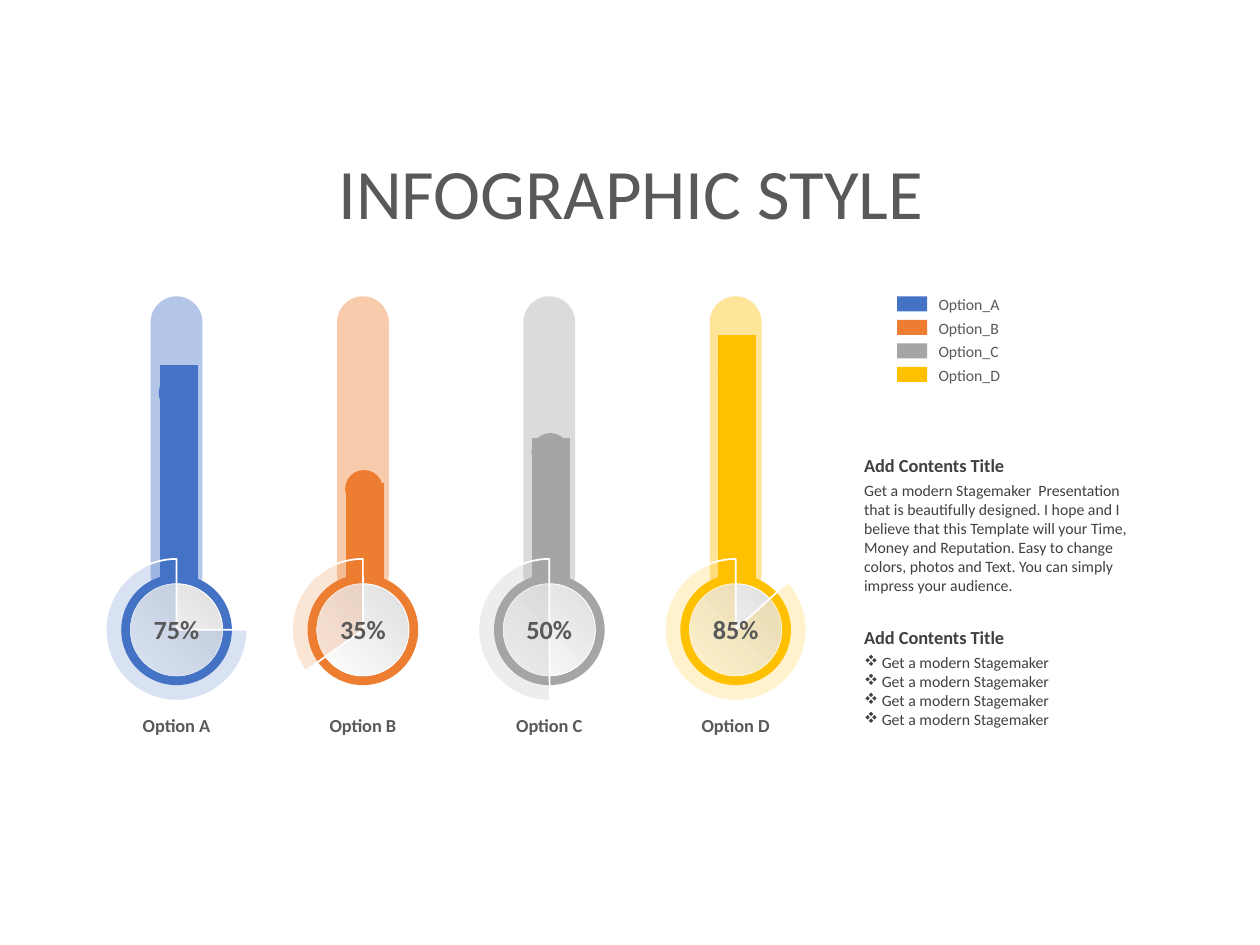
import pptx
import pptx.chart.data
import pptx.dml.color
import pptx.enum.chart
import pptx.enum.shapes
import pptx.enum.text
import pptx.oxml
import pptx.util
from collections import namedtuple

Pt = pptx.util.Pt
RGBColor = pptx.dml.color.RGBColor
Shape = pptx.enum.shapes.MSO_SHAPE
Align = pptx.enum.text.PP_ALIGN
Anchor = pptx.enum.text.MSO_ANCHOR

BLUE = RGBColor(0x44, 0x72, 0xC4)
ORANGE = RGBColor(0xED, 0x7D, 0x31)
GRAY = RGBColor(0xA5, 0xA5, 0xA5)
YELLOW = RGBColor(0xFF, 0xC0, 0x00)
WHITE = RGBColor(0xFF, 0xFF, 0xFF)
SILVER = RGBColor(0xDE, 0xDE, 0xDE)
LABEL = RGBColor(0x59, 0x59, 0x59)
BODY = RGBColor(0x40, 0x40, 0x40)
BLACK = RGBColor(0, 0, 0)

Option = namedtuple("Option", "letter color percent level pie_start cap_top")
OPTIONS = [
    Option("A", BLUE, "75%", 88, 0, 213.8),
    Option("B", ORANGE, "35%", 41, 144.35, 268.6),
    Option("C", GRAY, "50%", 59, 89.6, 247.5),
    Option("D", YELLOW, "85%", 100, 317.65, 200.2),
]
DRAWING = "http://schemas.openxmlformats.org/drawingml/2006/main"
CHART = "http://schemas.openxmlformats.org/drawingml/2006/chart"

TITLE_STYLE = {"size": Pt(40.5), "color": LABEL}
PERCENT_STYLE = {"size": Pt(15), "color": LABEL, "bold": True}
NAME_STYLE = {"size": Pt(10.5), "color": LABEL, "bold": True}
KEY_STYLE = {"size": Pt(9), "color": LABEL}
HEADING_STYLE = {"size": Pt(10.5), "color": BODY, "bold": True}
BODY_STYLE = {"size": Pt(9), "color": BODY}


def set_font(font, style):
    font.name = "Calibri"
    for name, value in style.items():
        if name == "color":
            font.color.rgb = value
        else:
            setattr(font, name, value)


def add_bullet(para):
    properties = para._p.get_or_add_pPr()
    properties.set("marL", str(Pt(10.1)))
    properties.set("indent", str(-Pt(10.1)))
    for element in ('buFont xmlns:a="{}" typeface="Wingdings" charset="2"',
                    'buChar xmlns:a="{}" char="v"'):
        properties.append(pptx.oxml.parse_xml(f"<a:{element.format(DRAWING)}/>"))


def add_text(page, box, lines, style, align=Align.LEFT, bulleted=False, frame_format=None):
    frame = page.shapes.add_textbox(*map(Pt, box)).text_frame
    frame.word_wrap = True
    for name, value in (frame_format or {}).items():
        setattr(frame, name, value)
    for index, line in enumerate(lines):
        para = frame.add_paragraph() if index else frame.paragraphs[0]
        para.alignment = align
        if bulleted:
            add_bullet(para)
        span = para.add_run()
        span.text = line
        set_font(span.font, style)


def add_figure(page, kind, box, color=None, opacity=100, outline=None):
    figure = page.shapes.add_shape(kind, *map(Pt, box))
    figure.shadow.inherit = False
    if color is not None:
        figure.fill.solid()
        figure.fill.fore_color.rgb = color
        if opacity < 100:
            swatch = figure.fill._xPr.find(f".//{{{DRAWING}}}srgbClr")
            swatch.append(pptx.oxml.parse_xml(
                f'<a:alpha xmlns:a="{DRAWING}" val="{opacity * 1000}"/>'))
    if outline:
        figure.line.color.rgb = WHITE
        figure.line.width = Pt(outline)
    else:
        figure.line.fill.background()
    return figure


def centered(x, y, size):
    return x - size / 2, y - size / 2, size, size


def add_tube(page, x, top, option):
    tube = add_figure(page, Shape.ROUNDED_RECTANGLE, (x - 14.8, top, 29.6, 174.2), option.color, 40)
    tube.adjustments[0] = 0.5


def add_bulb(page, x, y, option):
    add_figure(page, Shape.OVAL, centered(x, y, 63.2), option.color)
    disc = add_figure(page, Shape.OVAL, centered(x, y, 52.6), outline=0.5)
    disc.fill.gradient()
    disc.fill.gradient_angle = 225
    for stop, color, position in zip(disc.fill.gradient_stops, (SILVER, WHITE), (0, 1)):
        stop.color.rgb = color
        stop.position = position
    pie = add_figure(page, Shape.PIE, centered(x, y, 81), option.color, 20, 1)
    pie.adjustments[0] = option.pie_start * 0.6
    pie.adjustments[1] = 270 * 0.6
    add_text(page, (x - 31.6, y - 13, 63.2, 25.2), [option.percent], PERCENT_STYLE, Align.CENTER)
    add_text(page, (x - 36.4, y + 44.4, 72.8, 20), [f"Option {option.letter}"], NAME_STYLE, Align.CENTER)


def add_levels(page, box):
    numbers = pptx.chart.data.CategoryChartData()
    numbers.categories = ["1", "2", "3", "4"]
    numbers.add_series("Series 1", [option.level for option in OPTIONS])
    kind = pptx.enum.chart.XL_CHART_TYPE.COLUMN_STACKED
    chart = page.shapes.add_chart(kind, *map(Pt, box), numbers).chart
    set_font(chart.font, {"size": Pt(18), "color": BLACK})
    chart.has_legend = False
    chart.has_title = False
    for axis in (chart.category_axis, chart.value_axis):
        axis.has_major_gridlines = False
        axis.visible = False
    chart.value_axis.minimum_scale = 0
    chart.value_axis.maximum_scale = 100
    plot = chart.plots[0]
    for name, value in {"gap_width": 392, "overlap": 100, "vary_by_categories": False}.items():
        setattr(plot, name, value)
    series = plot.series[0]
    series.format.fill.solid()
    series.format.fill.fore_color.rgb = BLUE
    for index, option in enumerate(OPTIONS):
        fill = series.points[index].format.fill
        fill.solid()
        fill.fore_color.rgb = option.color
    area = chart._chartSpace.chart.plotArea
    for layout in area.findall(f"{{{CHART}}}layout"):
        area.remove(layout)
    sizes = "".join(f'<c:{name} val="{value}"/>' for name, value in
                    {"x": 0.02, "y": 0.07, "w": 0.96, "h": 0.9}.items())
    area.insert(0, pptx.oxml.parse_xml(
        f'<c:layout xmlns:c="{CHART}"><c:manualLayout><c:layoutTarget val="inner"/>'
        f'<c:xMode val="edge"/><c:yMode val="edge"/>{sizes}</c:manualLayout></c:layout>'))


def add_thermometers(page, left, top):
    columns = [(left + 40.5 + 106.5 * index, option) for index, option in enumerate(OPTIONS)]
    for x, option in columns:
        add_tube(page, x, top, option)
    add_levels(page, (left - 20, top + 10.8, 442.8, 159.8))
    for x, option in columns:
        add_bulb(page, x, top + 190.6, option)
    for x, option in columns:
        add_figure(page, Shape.OVAL, (x - 10.2, option.cap_top, 21.6, 21.6), option.color)


def add_key(page, left, top):
    for index, option in enumerate(OPTIONS):
        y = top + 13.45 * index
        add_figure(page, Shape.RECTANGLE, (left, y, 17.2, 8.6), option.color)
        add_text(page, (left + 16.6, y - 4.3, 60, 18), [f"Option_{option.letter}"], KEY_STYLE)


def add_section(page, box, lines, bulleted=False):
    left, top, width, height = box
    add_text(page, (left, top, width, 20), ["Add Contents Title"], HEADING_STYLE)
    add_text(page, (left, top + 15.2, width, height - 15.2), lines, BODY_STYLE, bulleted=bulleted)


def main():
    deck = pptx.Presentation()
    deck.slide_width, deck.slide_height = Pt(720), Pt(540)
    page = deck.slides.add_slide(deck.slide_layouts[6])
    add_text(page, (19, 87.8, 683.3, 42.5), ["INFOGRAPHIC STYLE"], TITLE_STYLE, Align.CENTER,
             frame_format={"vertical_anchor": Anchor.MIDDLE, "margin_top": Pt(2.7),
                           "margin_bottom": Pt(2.7)})
    add_thermometers(page, 60.4, 169.3)
    add_key(page, 512.6, 169.3)
    add_section(page, (486.7, 255.9, 174.2, 88), [
        "Get a modern Stagemaker  Presentation that is beautifully designed. "
        "I hope and I believe that this Template will your Time, Money and Reputation. "
        "Easy to change colors, photos and Text. You can simply impress your audience."])
    add_section(page, (486.7, 354.4, 174.2, 67), ["Get a modern Stagemaker"] * 4, True)
    deck.save("out.pptx")


if __name__ == "__main__":
    main()
